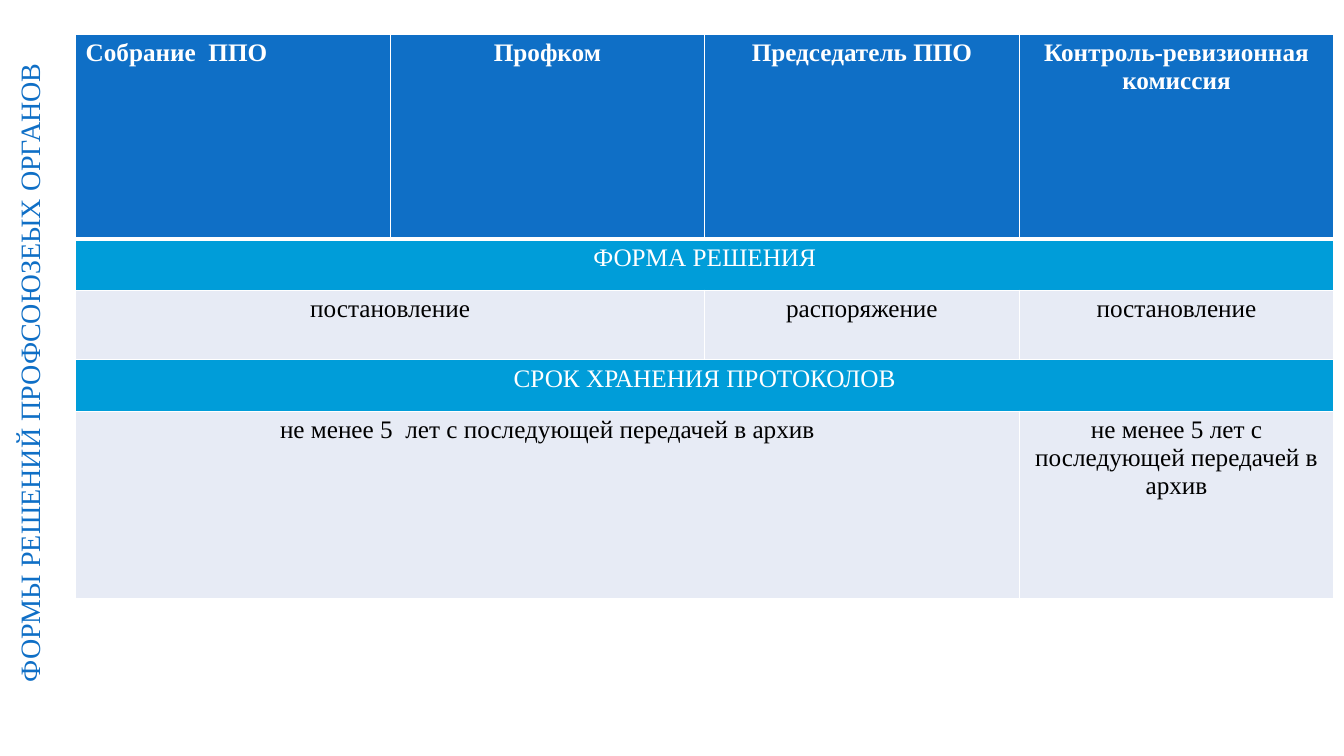
"""Build a slide with the table of decision forms of trade union bodies."""
from dataclasses import dataclass

from lxml import etree
from pptx import Presentation
from pptx.dml.color import RGBColor
from pptx.enum import text as t
from pptx.oxml import ns
from pptx.util import Inches, Pt

BLUE = RGBColor(0x0F, 0x6F, 0xC6)
CYAN = RGBColor(0x00, 0x9D, 0xD9)
PALE = RGBColor(0xE7, 0xEB, 0xF5)
WHITE = RGBColor(0xFF, 0xFF, 0xFF)
BLACK = RGBColor(0x00, 0x00, 0x00)
FONT = "Times New Roman"
COLUMN_WIDTH = 3.12
COLUMN_COUNT = 4


@dataclass(frozen=True)
class Entry:
    text: str
    span: int = 1
    align: t.PP_ALIGN = t.PP_ALIGN.CENTER


@dataclass(frozen=True)
class Band:
    height: float
    fill: RGBColor
    color: RGBColor
    entries: tuple[Entry, ...]
    bold: bool = False
    top_line: float = 1
    bottom_line: float = 1


BANDS = (
    Band(2.03, BLUE, WHITE, (
        Entry("Собрание  ППО", align=t.PP_ALIGN.LEFT),
        Entry("Профком"),
        Entry("Председатель ППО"),
        Entry("Контроль-ревизионная комиссия"),
    ), bold=True, bottom_line=3),
    Band(0.51, CYAN, WHITE, (Entry("ФОРМА РЕШЕНИЯ", 4),), top_line=3),
    Band(0.69, PALE, BLACK, (
        Entry("постановление", 2),
        Entry("распоряжение"),
        Entry("постановление"),
    )),
    Band(0.51, CYAN, WHITE, (Entry("СРОК ХРАНЕНИЯ ПРОТОКОЛОВ", 4),)),
    Band(1.86, PALE, BLACK, (
        Entry("не менее 5  лет с последующей передачей в архив", 3),
        Entry("не менее 5 лет с последующей передачей в архив"),
    )),
)


def write(paragraph, words: str, align: t.PP_ALIGN, color: RGBColor, **font_values) -> None:
    """Put one formatted run into a paragraph."""
    paragraph.alignment = align
    run = paragraph.add_run()
    run.text = words
    run.font.color.rgb = color
    for name, value in {"name": FONT, **font_values}.items():
        setattr(run.font, name, value)


def add_borders(cell, band: Band) -> None:
    """Draw white lines on the four sides of a cell."""
    properties = cell._tc.get_or_add_tcPr()
    widths = {"lnL": 1, "lnR": 1, "lnT": band.top_line, "lnB": band.bottom_line}
    for position, (side, width) in enumerate(widths.items()):
        line = etree.Element(ns.qn(f"a:{side}"), w=str(Pt(width)))
        solid = etree.SubElement(line, ns.qn("a:solidFill"))
        etree.SubElement(solid, ns.qn("a:srgbClr"), val=str(WHITE))
        properties.insert(position, line)


def add_heading(slide) -> None:
    """Add the vertical heading along the left edge."""
    heading = slide.shapes.add_textbox(Inches(0.07), Inches(0), Inches(0.54), Inches(7.4))
    frame = heading.text_frame
    frame.word_wrap = True
    frame.auto_size = t.MSO_AUTO_SIZE.SHAPE_TO_FIT_TEXT
    frame._txBody.bodyPr.set("vert", "vert270")
    write(frame.paragraphs[0], "ФОРМЫ РЕШЕНИЙ ПРОФСОЮЗЕЫХ ОРГАНОВ",
          t.PP_ALIGN.CENTER, BLUE, size=Pt(20))


def add_decisions(slide) -> None:
    """Add the table of decision forms and storage terms."""
    decisions = slide.shapes.add_table(
        len(BANDS), COLUMN_COUNT, Inches(0.75), Inches(0.34),
        Inches(COLUMN_WIDTH * COLUMN_COUNT), Inches(sum(band.height for band in BANDS)),
    ).table
    for column in decisions.columns:
        column.width = Inches(COLUMN_WIDTH)
    for row, band in enumerate(BANDS):
        decisions.rows[row].height = Inches(band.height)
        for cell in decisions.rows[row].cells:
            cell.fill.solid()
            cell.fill.fore_color.rgb = band.fill
            add_borders(cell, band)
        start = 0
        for entry in band.entries:
            cell = decisions.cell(row, start)
            if entry.span > 1:
                cell.merge(decisions.cell(row, start + entry.span - 1))
            write(cell.text_frame.paragraphs[0], entry.text, entry.align,
                  band.color, size=Pt(18), bold=band.bold)
            start += entry.span


def main() -> None:
    """Create and save the presentation."""
    presentation = Presentation()
    presentation.slide_width = Inches(13.33)
    presentation.slide_height = Inches(7.5)
    slide = presentation.slides.add_slide(presentation.slide_layouts[6])
    add_heading(slide)
    add_decisions(slide)
    presentation.save("out.pptx")


if __name__ == "__main__":
    main()
